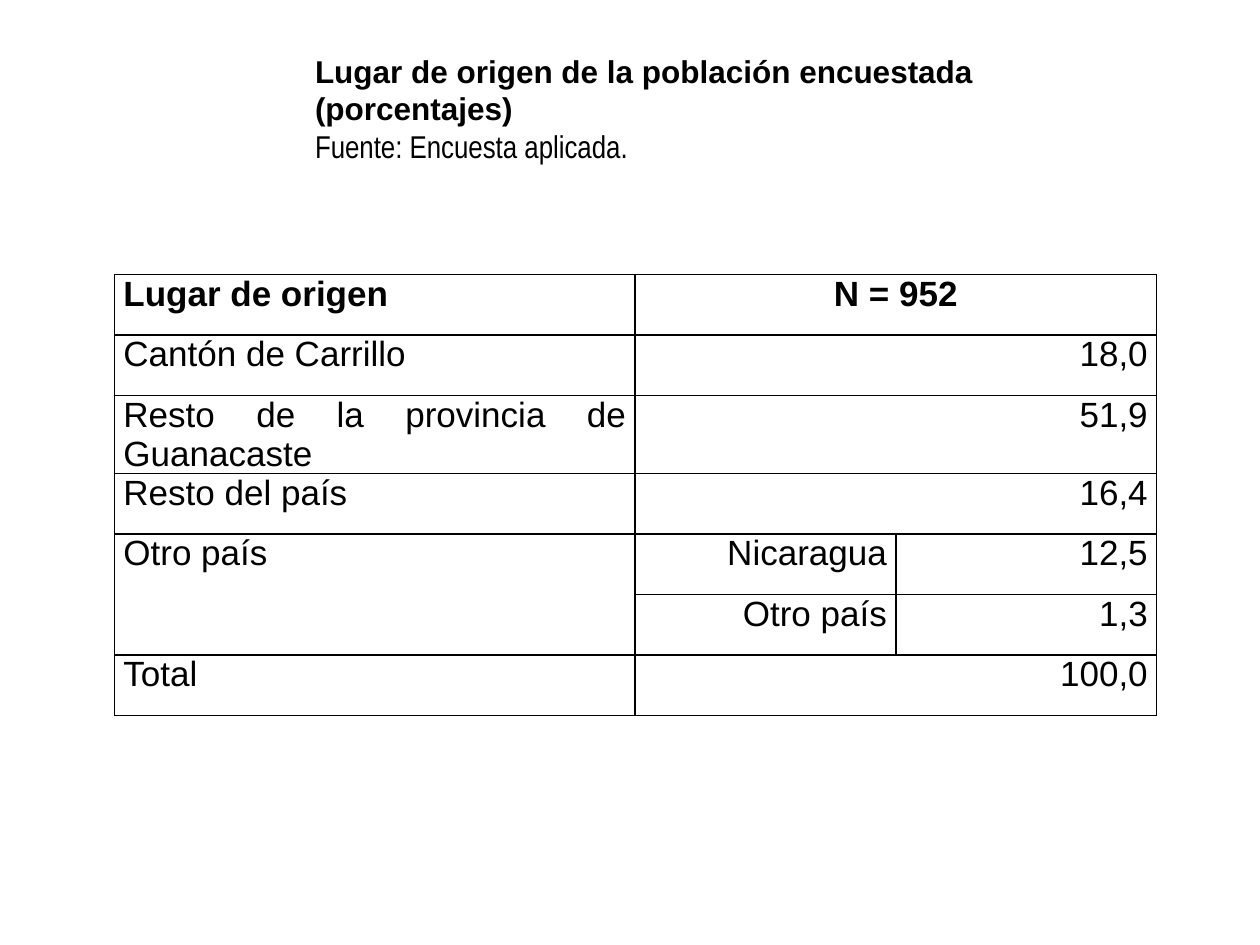
from lxml.etree import SubElement
from pptx import Presentation
from pptx.dml.color import RGBColor
from pptx.enum.text import MSO_ANCHOR, PP_ALIGN as Align
from pptx.oxml.ns import qn
from pptx.util import Inches, Pt

COLORS = {"ink": "000000", "paper": "FFFFFF"}

# Content: (text, font, bold)
HEADING = [
    ("Lugar de origen de la población encuestada", "Arial", True),
    ("(porcentajes)", "Arial", True),
    ("Fuente: Encuesta aplicada.", "Arial Narrow", False),
]
# None marks a cell covered by a merge
ORIGINS = [
    ("Lugar de origen", "N = 952", None),
    ("Cantón de Carrillo", "18,0", None),
    ("Resto de la provincia de Guanacaste", "51,9", None),
    ("Resto del país", "16,4", None),
    ("Otro país", "Nicaragua", "12,5"),
    (None, "Otro país", "1,3"),
    ("Total", "100,0", None),
]
COLUMN_WIDTHS = [4.13, 2.07, 2.07]
ROW_HEIGHT = 0.48


def write(paragraph, text, font, size, bold, align):
    paragraph.alignment = align
    run = paragraph.add_run()
    run.text = text
    run.font.name = font
    run.font.size = Pt(size)
    run.font.bold = bold
    run.font.color.rgb = RGBColor.from_string(COLORS["ink"])


def style_cell(cell):
    cell.margin_left = cell.margin_right = Inches(0.07)
    cell.margin_top = cell.margin_bottom = 0
    properties = cell._tc.get_or_add_tcPr()
    for side in ("a:lnL", "a:lnR", "a:lnT", "a:lnB"):
        border = SubElement(properties, qn(side), w=str(Pt(1)))
        fill = SubElement(border, qn("a:solidFill"))
        SubElement(fill, qn("a:srgbClr"), val=COLORS["ink"])
    cell.fill.background()


def add_heading(slide):
    title = slide.shapes.title
    title.left, title.top = Inches(2.4), Inches(0.36)
    title.width, title.height = Inches(5.48), Inches(1.31)
    frame = title.text_frame
    frame.word_wrap = False
    frame.vertical_anchor = MSO_ANCHOR.TOP
    for i, (text, font, bold) in enumerate(HEADING):
        paragraph = frame.add_paragraph() if i else frame.paragraphs[0]
        write(paragraph, text, font, 18, bold, Align.LEFT)


def add_origins(slide):
    table = slide.shapes.add_table(
        len(ORIGINS), len(COLUMN_WIDTHS), Inches(0.91), Inches(2.18),
        Inches(sum(COLUMN_WIDTHS)), Inches(ROW_HEIGHT * len(ORIGINS))).table
    table.horz_banding = False
    table.first_row = False
    for column, width in zip(table.columns, COLUMN_WIDTHS):
        column.width = Inches(width)
    for r, row in enumerate(ORIGINS):
        table.rows[r].height = Inches(ROW_HEIGHT)
        for c, text in enumerate(row):
            cell = table.cell(r, c)
            style_cell(cell)
            if text is None:
                # Join with the cell to the left, or above in the first column
                origin = table.cell(r, c - 1) if c else table.cell(r - 1, c)
                origin.merge(cell)
                continue
            value_align = Align.RIGHT if r else Align.CENTER
            write(cell.text_frame.paragraphs[0], text, "Arial", 20, r == 0,
                  value_align if c else Align.JUSTIFY)


def main():
    deck = Presentation()
    deck.slide_width, deck.slide_height = Inches(10), Inches(7.5)
    slide = deck.slides.add_slide(deck.slide_layouts[5])  # title only
    slide.background.fill.solid()
    slide.background.fill.fore_color.rgb = RGBColor.from_string(COLORS["paper"])
    add_origins(slide)
    add_heading(slide)
    deck.save("out.pptx")


if __name__ == "__main__":
    main()
